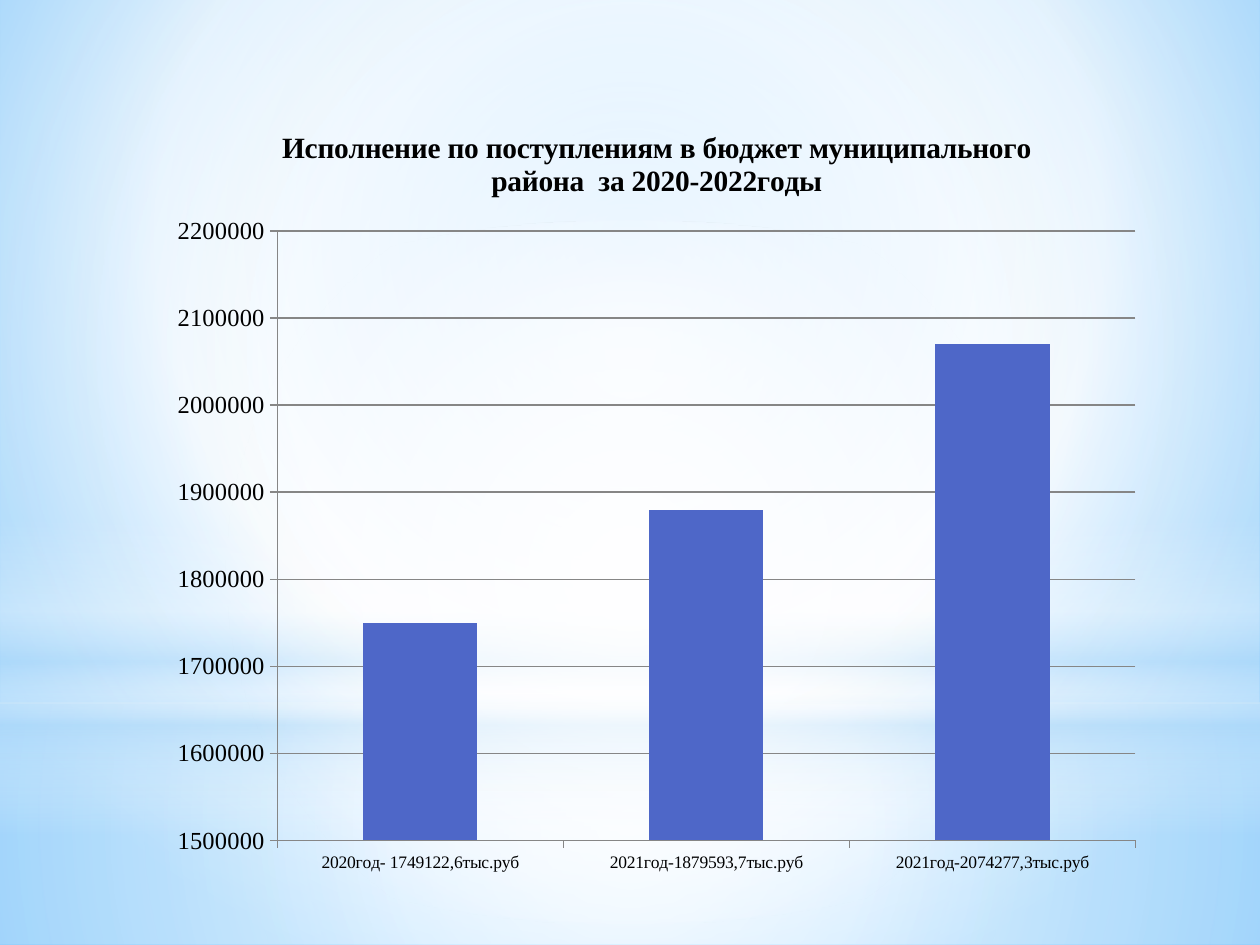
from pptx import Presentation
from pptx import util as u
from pptx.chart.data import CategoryChartData
from pptx.dml.color import RGBColor
from pptx.enum import chart as chart_enum, shapes
from pptx.oxml import ns, parse_xml

WIDTH, HEIGHT = u.Inches(10), u.Inches(7.5)
HORIZON = 5.58 / 7.5
FONT = "Times New Roman"
WHITE, PALE, SKY, BLUE = "FFFFFF", "B4DCFA", "9ED5FF", "5BB9FF"
CENTER = (50, 50, 50, 50)


def color(value):
    return RGBColor.from_string(value)


def apply_gradient(fill, element, stops, focus=None):
    fill.gradient()
    gradient = element.find(".//" + ns.qn("a:gradFill"))
    stop_xml = "".join(
        f'<a:gs pos="{position * 1000}"><a:srgbClr val="{value}">'
        f'<a:alpha val="{alpha * 1000}"/></a:srgbClr></a:gs>'
        for position, value, alpha in stops
    )
    if focus:
        left, top, right, bottom = (share * 1000 for share in focus)
        direction = (
            f'<a:path path="circle"><a:fillToRect l="{left}" t="{top}" '
            f'r="{right}" b="{bottom}"/></a:path>'
        )
    else:
        direction = '<a:lin ang="5400000" scaled="0"/>'
    replacement = parse_xml(
        f'<a:gradFill {ns.nsdecls("a")} rotWithShape="1">'
        f"<a:gsLst>{stop_xml}</a:gsLst>{direction}</a:gradFill>"
    )
    gradient.getparent().replace(gradient, replacement)


def add_glow(slide, kind, top, height, stops, focus=None):
    shape = slide.shapes.add_shape(
        kind, 0, round(HEIGHT * top), WIDTH, round(HEIGHT * height)
    )
    shape.shadow.inherit = False
    shape.line.fill.background()
    apply_gradient(shape.fill, shape.element, stops, focus)


def add_backdrop(slide):
    apply_gradient(
        slide.background.fill, slide.element,
        [(0, SKY, 100), (60, WHITE, 100), (100, BLUE, 100)], (20, 10, 20, 60),
    )
    rectangle = shapes.MSO_SHAPE.RECTANGLE
    add_glow(slide, rectangle, HORIZON, 1 - HORIZON,
             [(0, WHITE, 91), (37, WHITE, 76), (100, PALE, 79)], CENTER)
    add_glow(slide, rectangle, 0, HORIZON,
             [(0, WHITE, 89), (48, WHITE, 62), (100, PALE, 79)], CENTER)
    add_glow(slide, rectangle, 0.55, 1 / 3,
             [(0, WHITE, 0), (29, WHITE, 30), (45, PALE, 40),
              (55, WHITE, 26), (65, PALE, 60), (100, WHITE, 0)])
    add_glow(slide, shapes.MSO_SHAPE.OVAL, 1.75 / 7.5, HORIZON,
             [(0, WHITE, 100), (56, WHITE, 0)], CENTER)


def format_font(font, size, bold=False):
    font.name = FONT
    font.size = u.Pt(size)
    font.bold = bold
    font.color.rgb = color("000000")


def format_line(line):
    line.color.rgb = color("868686")
    line.width = u.Pt(0.75)


def format_axis(axis, size):
    axis.major_tick_mark = chart_enum.XL_TICK_MARK.OUTSIDE
    axis.minor_tick_mark = chart_enum.XL_TICK_MARK.NONE
    format_font(axis.tick_labels.font, size)
    format_line(axis.format.line)


def place_plot(chart, x, y, w, h):
    plot_area = chart.element.find(".//" + ns.qn("c:plotArea"))
    for layout in plot_area.findall(ns.qn("c:layout")):
        plot_area.remove(layout)
    sizes = "".join(
        f'<c:{name} val="{value}"/>'
        for name, value in (("x", x), ("y", y), ("w", w), ("h", h))
    )
    plot_area.insert(0, parse_xml(
        f'<c:layout {ns.nsdecls("c")}><c:manualLayout>'
        '<c:layoutTarget val="inner"/><c:xMode val="edge"/>'
        f'<c:yMode val="edge"/>{sizes}</c:manualLayout></c:layout>'
    ))


def add_revenue_chart(slide):
    data = CategoryChartData()
    data.categories = [
        "2020год- 1749122,6тыс.руб",
        "2021год-1879593,7тыс.руб",
        "2021год-2074277,3тыс.руб",
    ]
    data.add_series("Series 1", (1750000, 1880000, 2070000))
    chart = slide.shapes.add_chart(
        chart_enum.XL_CHART_TYPE.COLUMN_CLUSTERED,
        u.Inches(1.25), u.Inches(0.8), u.Inches(7.92), u.Inches(6.26), data,
    ).chart
    chart.has_legend = False
    format_font(chart.font, 14)

    chart.has_title = True
    title = chart.chart_title
    title.include_in_layout = False
    title.text_frame.text = (
        "Исполнение по поступлениям в бюджет муниципального "
        "района  за 2020-2022годы"
    )
    format_font(title.text_frame.paragraphs[0].runs[0].font, 16.8, True)

    format_axis(chart.category_axis, 10)
    value_axis = chart.value_axis
    format_axis(value_axis, 14)
    value_axis.minimum_scale = 1500000
    value_axis.maximum_scale = 2200000
    value_axis.major_unit = 100000
    value_axis.tick_labels.number_format = "0"
    value_axis.tick_labels.number_format_is_linked = False
    value_axis.has_major_gridlines = True
    format_line(value_axis.major_gridlines.format.line)

    plot = chart.plots[0]
    plot.gap_width = 150
    plot.vary_by_categories = False
    fill = plot.series[0].format.fill
    fill.solid()
    fill.fore_color.rgb = color("4E67C8")
    place_plot(chart, 0.12, 0.165, 0.86, 0.773)


def main():
    presentation = Presentation()
    presentation.slide_width, presentation.slide_height = WIDTH, HEIGHT
    slide = presentation.slides.add_slide(presentation.slide_layouts[6])
    add_backdrop(slide)
    add_revenue_chart(slide)
    presentation.save("out.pptx")


if __name__ == "__main__":
    main()
